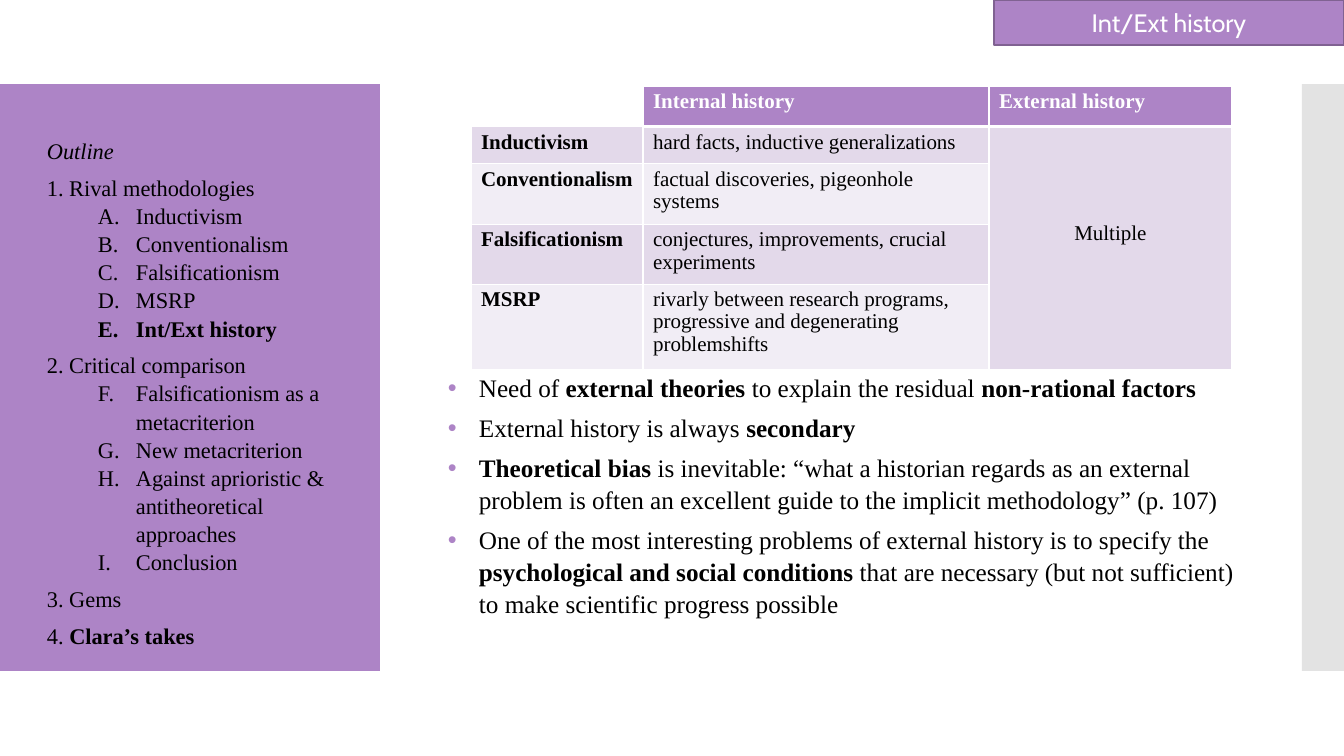
from lxml.etree import SubElement
from pptx import Presentation
from pptx.dml.color import RGBColor
from pptx.enum.shapes import MSO_SHAPE as Shape
from pptx.enum.text import MSO_ANCHOR as Anchor, PP_ALIGN as Align
from pptx.oxml.ns import qn
from pptx.util import Emu, Pt

PURPLE, DARK_PURPLE, GREY = "AD84C6", "806292", "C8C8C8"
BAND_DARK, BAND_LIGHT = "E3D9EA", "F1EDF5"
BLACK, WHITE = "000000", "FFFFFF"
SERIF, SANS = "Times New Roman", "Cabin"

TITLE = "Int/Ext history"
OUTLINE = [
    ("1. Rival methodologies",
     ["Inductivism", "Conventionalism", "Falsificationism", "MSRP", "*Int/Ext history*"]),
    ("2. Critical comparison",
     ["Falsificationism as a metacriterion", "New metacriterion",
      "Against aprioristic & antitheoretical approaches", "Conclusion"]),
    ("3. Gems", []),
    ("4. *Clara’s takes*", []),
]
HEADINGS = ["", "*Internal history*", "*External history*"]
METHODOLOGIES = [
    ("Inductivism", "hard facts, inductive generalizations"),
    ("Conventionalism", "factual discoveries, pigeonhole systems"),
    ("Falsificationism", "conjectures, improvements, crucial experiments"),
    ("MSRP", "rivarly between research programs, progressive and degenerating problemshifts"),
]
EXTERNAL = "Multiple"
POINTS = [
    "Need of *external theories *to explain the residual *non-rational factors*",
    "External history is always *secondary*",
    "*Theoretical bias* is inevitable: “what a historian regards as an external problem "
    "is often an excellent guide to the implicit methodology” (p. 107)",
    "One of the most interesting problems of external history is to specify the "
    "*psychological and social conditions* that are necessary (but not sufficient) "
    "to make scientific progress possible",
]
COLUMN_WIDTHS = [172, 346, 243]
ROW_HEIGHTS = [37, 37, 61, 60, 85]


def px(length):
    return Emu(round(length * 914400 / 100.8))


def color(value):
    return RGBColor.from_string(value)


def add_panel(page, left, top, width, height, fill):
    panel = page.shapes.add_shape(Shape.RECTANGLE, px(left), px(top), px(width), px(height))
    panel.shadow.inherit = False
    panel.fill.solid()
    panel.fill.fore_color.rgb = color(fill)
    panel.line.fill.background()
    return panel


def add_frame(page, left, top, width, height):
    frame = page.shapes.add_textbox(px(left), px(top), px(width), px(height)).text_frame
    frame.word_wrap = True
    return frame


def write(para, text, size, font=SERIF, ink=BLACK, spacing=1.05, after=0):
    para.line_spacing = spacing
    para.space_after = Pt(after)
    for index, part in enumerate(text.split("*")):
        if part:
            span = para.add_run()
            span.text = part
            span.font.size = Pt(size)
            span.font.name = font
            span.font.bold = index % 2 == 1
            span.font.color.rgb = color(ink)


def next_para(frame):
    first = frame.paragraphs[0]
    return first if not first.runs else frame.add_paragraph()


def hang(para, indent, hanging):
    props = para._p.get_or_add_pPr()
    props.set("marL", str(px(indent)))
    props.set("indent", str(-px(hanging)))
    return props


def letter(para, start):
    props = hang(para, 89, 38)
    SubElement(props, qn("a:buAutoNum"), type="alphaUcPeriod", startAt=str(start))


def bullet(para):
    props = hang(para, 31, 31)
    SubElement(SubElement(props, qn("a:buClr")), qn("a:srgbClr"), val=PURPLE)
    SubElement(props, qn("a:buFont"), typeface="Arial")
    SubElement(props, qn("a:buChar"), char="•")


def style_cell(cell, fill, bottom):
    props = cell._tc.get_or_add_tcPr()
    for side, width in (("L", 1), ("R", 1), ("T", 1), ("B", bottom)):
        border = SubElement(props, qn("a:ln" + side), w=str(Pt(width)))
        SubElement(SubElement(border, qn("a:solidFill")), qn("a:srgbClr"), val=WHITE)
    cell.fill.solid()
    cell.fill.fore_color.rgb = color(fill)


def add_outline(page):
    frame = add_frame(page, 37, 131, 311, 506)
    heading = next_para(frame)
    write(heading, "Outline", 16, after=6)
    heading.runs[0].font.italic = True
    start = 1
    for chapter, sections in OUTLINE:
        write(next_para(frame), chapter, 16, after=0 if sections else 6)
        for section in sections:
            para = next_para(frame)
            write(para, section, 16, after=6 if section == sections[-1] else 0)
            letter(para, start)
        start += len(sections)


def add_history_table(page):
    table = page.shapes.add_table(len(ROW_HEIGHTS), len(COLUMN_WIDTHS), px(471), px(86),
                                  px(sum(COLUMN_WIDTHS)), px(sum(ROW_HEIGHTS))).table
    for column, width in zip(table.columns, COLUMN_WIDTHS):
        column.width = px(width)
    for row, height in zip(table.rows, ROW_HEIGHTS):
        row.height = px(height)
    rows = [HEADINGS] + [(f"*{name}*", internal, "") for name, internal in METHODOLOGIES]
    for r, texts in enumerate(rows):
        for c, text in enumerate(texts):
            cell = table.cell(r, c)
            if r == 0:
                fill = PURPLE if text else WHITE
            else:
                fill = BAND_DARK if r % 2 or c == 2 else BAND_LIGHT
            style_cell(cell, fill, 3 if r == 0 and text else 1)
            write(cell.text_frame.paragraphs[0], text, 15,
                  ink=BLACK if r else WHITE, spacing=0.95)
    external = table.cell(1, 2)
    external.merge(table.cell(len(METHODOLOGIES), 2))
    external.margin_top = px(97)
    para = external.text_frame.paragraphs[0]
    write(para, EXTERNAL, 15, spacing=0.95)
    para.alignment = Align.CENTER


def add_points(page):
    frame = add_frame(page, 438, 366, 829, 249)
    for point in POINTS:
        para = next_para(frame)
        write(para, point, 18, after=6)
        bullet(para)


def add_title(page):
    tab = add_panel(page, 994, 0, 350, 45, PURPLE)
    tab.line.color.rgb = color(DARK_PURPLE)
    tab.line.width = Pt(0.85)
    tab.text_frame.vertical_anchor = Anchor.MIDDLE
    para = tab.text_frame.paragraphs[0]
    write(para, TITLE, 18, font=SANS, ink=WHITE, spacing=1.0)
    para.alignment = Align.CENTER


def main():
    deck = Presentation()
    deck.slide_width, deck.slide_height = px(1344), px(756)
    page = deck.slides.add_slide(deck.slide_layouts[6])
    add_panel(page, 0, 84, 380, 587, PURPLE)
    edge = add_panel(page, 1302, 84, 42, 587, GREY)
    tint = edge.fill._xPr.find(".//" + qn("a:srgbClr"))
    SubElement(tint, qn("a:alpha"), val="50000")
    add_outline(page)
    add_title(page)
    add_history_table(page)
    add_points(page)
    deck.save("out.pptx")


if __name__ == "__main__":
    main()
